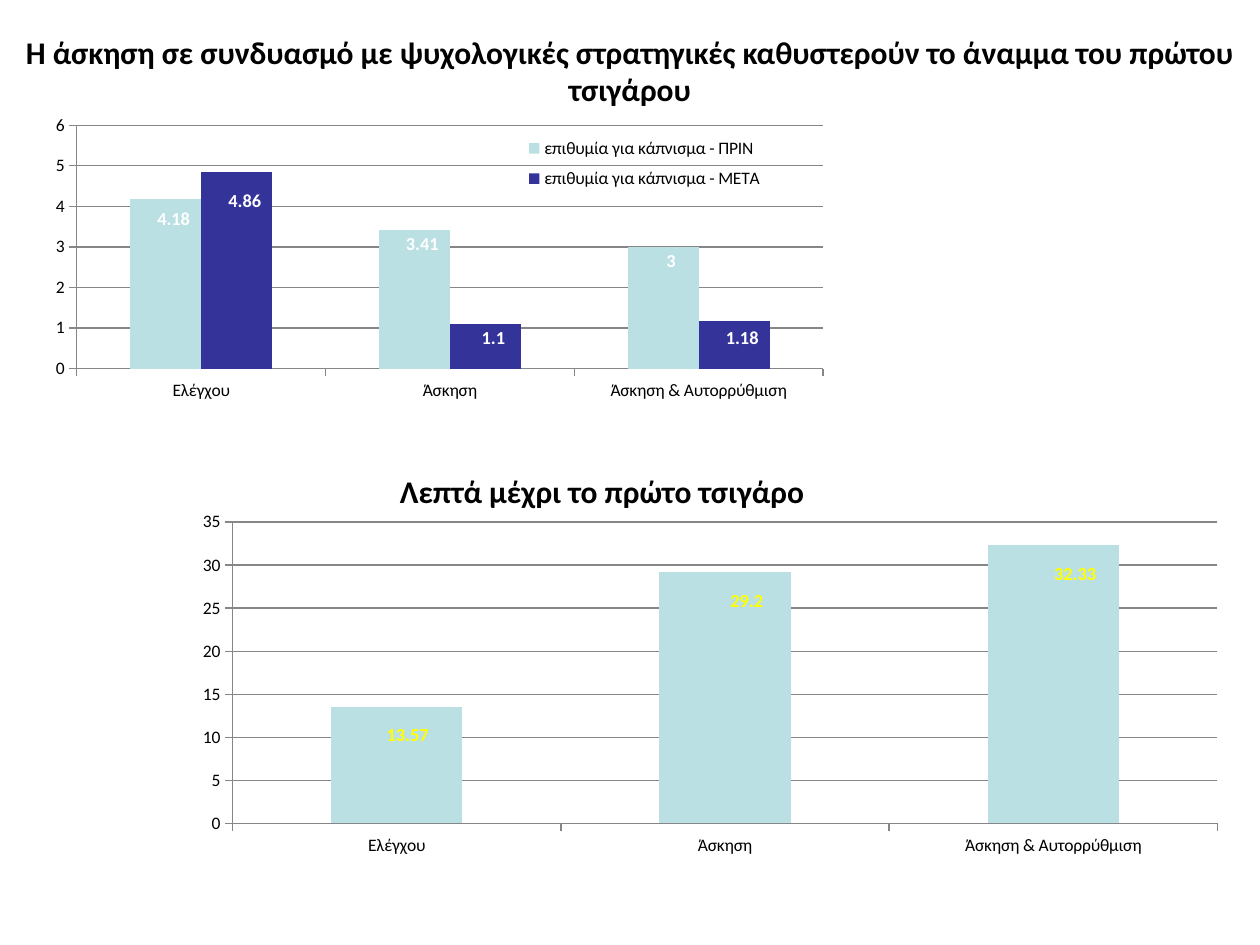
from lxml import etree
from pptx import Presentation
from pptx.chart.data import CategoryChartData
from pptx.dml.color import RGBColor
from pptx.enum.chart import XL_CHART_TYPE, XL_LABEL_POSITION, XL_LEGEND_POSITION, XL_TICK_MARK
from pptx.enum.text import MSO_ANCHOR, MSO_AUTO_SIZE, PP_ALIGN
from pptx.oxml.ns import qn
from pptx.util import Pt

COLUMNS = XL_CHART_TYPE.COLUMN_CLUSTERED
OUTSIDE_END = XL_LABEL_POSITION.OUTSIDE_END
LEGEND_RIGHT = XL_LEGEND_POSITION.RIGHT
TICK_OUTSIDE = XL_TICK_MARK.OUTSIDE
TOP = MSO_ANCHOR.TOP
FIT_SHAPE = MSO_AUTO_SIZE.SHAPE_TO_FIT_TEXT
CENTER = PP_ALIGN.CENTER

BLACK = RGBColor(0x00, 0x00, 0x00)
WHITE = RGBColor(0xFF, 0xFF, 0xFF)
YELLOW = RGBColor(0xFF, 0xFF, 0x00)
GREY = RGBColor(0x86, 0x86, 0x86)
PALE_BLUE = RGBColor(0xBB, 0xE0, 0xE3)
INDIGO = RGBColor(0x33, 0x33, 0x99)

GROUPS = ["Ελέγχου", "Άσκηση", "Άσκηση & Αυτορρύθμιση"]


def format_font(font, size, color=BLACK, bold=False, name="Calibri"):
    font.name = name
    font.size = Pt(size)
    font.bold = bold
    font.color.rgb = color


def write(frame, text, align=CENTER, **style):
    paragraph = frame.paragraphs[0]
    paragraph.alignment = align
    run = paragraph.add_run()
    run.text = text
    format_font(run.font, **style)


def set_layout(parent, after=None, **settings):
    """Give a chart part a manual layout, placed after the child tag named."""
    for old in parent.findall(qn("c:layout")):
        parent.remove(old)
    layout = etree.Element(qn("c:layout"))
    manual = etree.SubElement(layout, qn("c:manualLayout"))
    for tag, value in settings.items():
        etree.SubElement(manual, qn(f"c:{tag}")).set("val", str(value))
    if after:
        parent.find(qn(after)).addnext(layout)
    else:
        parent.insert(0, layout)


class SlideBuilder:
    heading_size = 18
    body_size = 10
    label_size = 10.5
    line_width = 0.75

    def __init__(self, slide):
        self.slide = slide

    def add_title(self, text, left, top, width, height):
        title = self.slide.shapes.title
        title.left, title.top, title.width, title.height = map(Pt, (left, top, width, height))
        frame = title.text_frame
        frame.word_wrap = True
        frame.auto_size = FIT_SHAPE
        frame.vertical_anchor = TOP
        write(frame, text, size=self.heading_size, bold=True)

    def add_columns(self, box, series, plot_box, maximum, step, label_color):
        """Add a column chart; series holds (name, values, color, label offsets)."""
        data = CategoryChartData()
        data.categories = GROUPS
        for name, values, _, _ in series:
            data.add_series(name, values)
        chart = self.slide.shapes.add_chart(COLUMNS, *map(Pt, box), data).chart
        format_font(chart.font, self.body_size)
        chart.has_title = False
        chart.has_legend = False
        plot = chart.plots[0]
        plot.gap_width = 150
        plot.overlap = 0
        plot.vary_by_categories = False
        x, y, w, h = plot_box
        set_layout(chart._chartSpace.find(".//" + qn("c:plotArea")), layoutTarget="inner",
                   xMode="edge", yMode="edge", x=x, y=y, w=w, h=h)
        self.style_axes(chart, maximum, step)
        for columns, (_, _, color, offsets) in zip(plot.series, series):
            columns.format.fill.solid()
            columns.format.fill.fore_color.rgb = color
            self.label_columns(columns, offsets, label_color)
        return chart

    def style_axes(self, chart, maximum, step):
        values = chart.value_axis
        values.minimum_scale = 0
        values.maximum_scale = maximum
        values.major_unit = step
        values.has_major_gridlines = True
        for axis in (chart.category_axis, values):
            axis.major_tick_mark = TICK_OUTSIDE
        for part in (chart.category_axis, values, values.major_gridlines):
            part.format.line.color.rgb = GREY
            part.format.line.width = Pt(self.line_width)

    def label_columns(self, columns, offsets, color):
        """Label each column, shifted by its offset and without leader lines."""
        for index in range(len(offsets)):
            label = columns.points[index].data_label
            format_font(label.font, self.label_size, color, bold=True)
            label.position = OUTSIDE_END
        for label, (x, y) in zip(columns._element.iter(qn("c:dLbl")), offsets):
            set_layout(label, after="c:idx", x=x, y=y)
        for leader in columns._element.iter(qn("c:showLeaderLines")):
            leader.set("val", "0")

    def add_legend(self, chart, x, y, w, h):
        chart.has_legend = True
        legend = chart.legend
        legend.position = LEGEND_RIGHT
        legend.include_in_layout = False
        format_font(legend.font, self.body_size)
        set_layout(legend._element, after="c:legendPos",
                   xMode="edge", yMode="edge", x=x, y=y, w=w, h=h)

    def add_chart_title(self, chart, text, x, y):
        chart.has_title = True
        title = chart.chart_title
        write(title.text_frame, text, size=self.heading_size, bold=True)
        set_layout(title._element, after="c:tx", xMode="edge", yMode="edge", x=x, y=y)


def main():
    deck = Presentation()
    deck.slide_width, deck.slide_height = Pt(720), Pt(540)
    builder = SlideBuilder(deck.slides.add_slide(deck.slide_layouts[5]))
    builder.add_title("Η άσκηση σε συνδυασμό με ψυχολογικές στρατηγικές καθυστερούν "
                      "το άναμμα του πρώτου τσιγάρου", 0, 15, 720, 51)

    desire = builder.add_columns(
        (14, 66, 460, 176),
        [("επιθυμία για κάπνισμα - ΠΡΙΝ", (4.18, 3.41, 3), PALE_BLUE,
          [(0.01, 0.12), (0.01, 0.1), (0.01, 0.1)]),
         ("επιθυμία για κάπνισμα - ΜΕΤΑ", (4.86, 1.1, 1.18), INDIGO,
          [(0.01, 0.15), (0.01, 0.1), (0.01, 0.11)])],
        plot_box=(0.065, 0.031, 0.927, 0.791), maximum=6, step=1, label_color=WHITE)
    builder.add_legend(desire, 0.61, 0.04, 0.32, 0.23)

    delay_name = "Λεπτά μέχρι το πρώτο τσιγάρο"
    delay = builder.add_columns(
        (88, 242, 624, 289),
        [(delay_name, (13.57, 29.2, 32.33), PALE_BLUE,
          [(0.01, 0.09), (0.02, 0.09), (0.02, 0.09)])],
        plot_box=(0.072, 0.195, 0.902, 0.596), maximum=35, step=5, label_color=YELLOW)
    builder.add_chart_title(delay, delay_name, 0.22, 0.08)

    deck.save("out.pptx")


if __name__ == "__main__":
    main()
